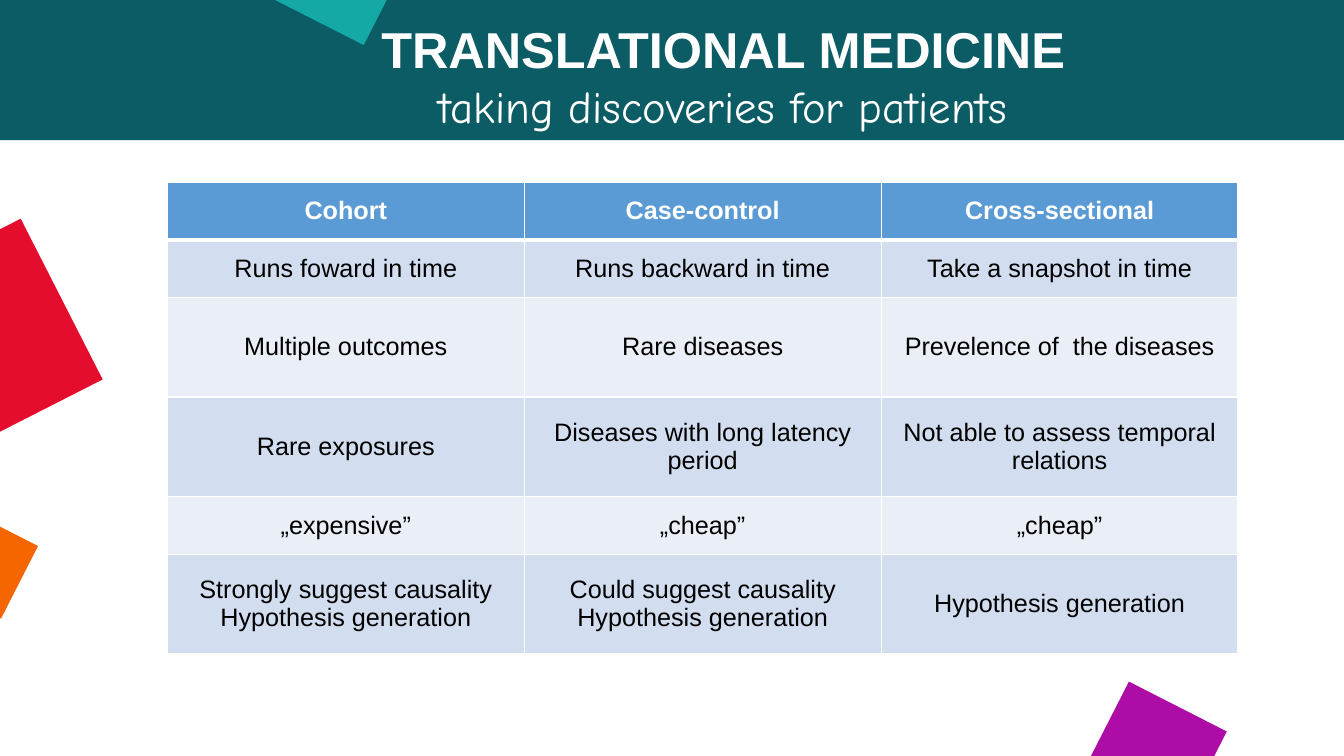
from lxml.etree import SubElement
from pptx import Presentation
from pptx.dml.color import RGBColor as Rgb
from pptx.enum.shapes import MSO_SHAPE as Shape
from pptx.enum.text import MSO_ANCHOR as Anchor, MSO_AUTO_SIZE as AutoSize, PP_ALIGN as Align
from pptx.oxml.ns import qn
from pptx.util import Inches, Pt

COLORS = {
    "white": "FFFFFF", "black": "000000", "band": "0C5C65",
    "red": "E50D2E", "purple": "AD0DA6", "orange": "F56600", "teal": "15A9A6",
    "header": "5B9BD5", "odd": "D2DEEF", "even": "EAEFF7",
}


class SlideBuilder:
    """Holds the style and the current slide."""

    font = "Arial"

    def __init__(self, slide):
        self.slide = slide

    def block(self, left, top, width, height, color, rotation=0):
        block = self.slide.shapes.add_shape(
            Shape.RECTANGLE, Inches(left), Inches(top), Inches(width), Inches(height))
        block.rotation = rotation
        block.shadow.inherit = False
        block.fill.solid()
        block.fill.fore_color.rgb = Rgb.from_string(COLORS[color])
        block.line.fill.background()

    def line_of_text(self, paragraph, text, size, color, bold=False, font=None):
        paragraph.alignment = Align.CENTER
        run = paragraph.add_run()
        run.text = text
        run.font.name = font or self.font
        run.font.size = Pt(size)
        run.font.bold = bold
        run.font.color.rgb = Rgb.from_string(COLORS[color])

    def title(self, left, top, width, height, lines):
        title = self.slide.shapes.title
        title.left, title.top = Inches(left), Inches(top)
        title.width, title.height = Inches(width), Inches(height)
        frame = title.text_frame
        frame.word_wrap = True
        frame.auto_size = AutoSize.NONE
        frame.vertical_anchor = Anchor.TOP
        for index, line in enumerate(lines):
            paragraph = frame.add_paragraph() if index else frame.paragraphs[0]
            self.line_of_text(paragraph, color="white", **line)
        # Bring the title in front of the band
        self.slide.shapes._spTree.append(title._element)

    def borders(self, cell, widths):
        properties = cell._tc.get_or_add_tcPr()
        for side, width in widths.items():
            border = SubElement(properties, qn(f"a:ln{side}"), w=str(Pt(width)))
            fill = SubElement(border, qn("a:solidFill"))
            SubElement(fill, qn("a:srgbClr"), val=COLORS["white"])

    def table(self, left, top, column_width, row_heights, rows):
        table = self.slide.shapes.add_table(
            len(rows), len(rows[0]), Inches(left), Inches(top),
            Inches(column_width * len(rows[0])), Inches(sum(row_heights))).table
        for column in table.columns:
            column.width = Inches(column_width)
        for r, (height, texts) in enumerate(zip(row_heights, rows)):
            table.rows[r].height = Inches(height)
            fill = "header" if r == 0 else "odd" if r % 2 else "even"
            for c, text in enumerate(texts):
                cell = table.cell(r, c)
                # The line under the header is thicker
                self.borders(cell, {"L": 1, "R": 1, "T": 3 if r == 1 else 1,
                                    "B": 3 if r == 0 else 1})
                cell.fill.solid()
                cell.fill.fore_color.rgb = Rgb.from_string(COLORS[fill])
                cell.vertical_anchor = Anchor.MIDDLE
                frame = cell.text_frame
                for index, line in enumerate(text.split("\n")):
                    paragraph = frame.add_paragraph() if index else frame.paragraphs[0]
                    self.line_of_text(paragraph, line, 18,
                                      "black" if r else "white", bold=r == 0)


STUDY_DESIGNS = [
    ("Cohort", "Case-control", "Cross-sectional"),
    ("Runs foward in time", "Runs backward in time", "Take a snapshot in time"),
    ("Multiple outcomes", "Rare diseases", "Prevelence of  the diseases"),
    ("Rare exposures", "Diseases with long latency period",
     "Not able to assess temporal relations"),
    ("„expensive”", "„cheap”", "„cheap”"),
    ("Strongly suggest causality\nHypothesis generation",
     "Could suggest causality\nHypothesis generation", "Hypothesis generation"),
]


def main():
    deck = Presentation()
    deck.slide_width, deck.slide_height = Inches(13.33), Inches(7.5)
    title_only = deck.slide_layouts[5]
    builder = SlideBuilder(deck.slides.add_slide(title_only))

    # Header band and tilted squares
    builder.block(0, 0, 13.33, 1.39, "band")
    builder.block(-1.09, 2.48, 1.8, 1.79, "red", 333)
    builder.block(10.89, 6.95, 1.09, 1.09, "purple", 27)
    builder.block(-0.61, 5.18, 0.85, 0.81, "orange", 27)
    builder.block(2.91, -0.73, 0.98, 1.01, "teal", 27)

    # Comparison of study designs
    low, high = 0.57, 0.99
    builder.table(1.66, 1.81, 3.54, [low, low, high, high, low, high], STUDY_DESIGNS)

    # Title and motto
    builder.title(3.67, 0.13, 7.01, 1.34, [
        {"text": "TRANSLATIONAL MEDICINE", "size": 36, "bold": True},
        {"text": "taking discoveries for patients", "size": 32, "font": "Comic Neue"},
    ])

    deck.save("out.pptx")


if __name__ == "__main__":
    main()
